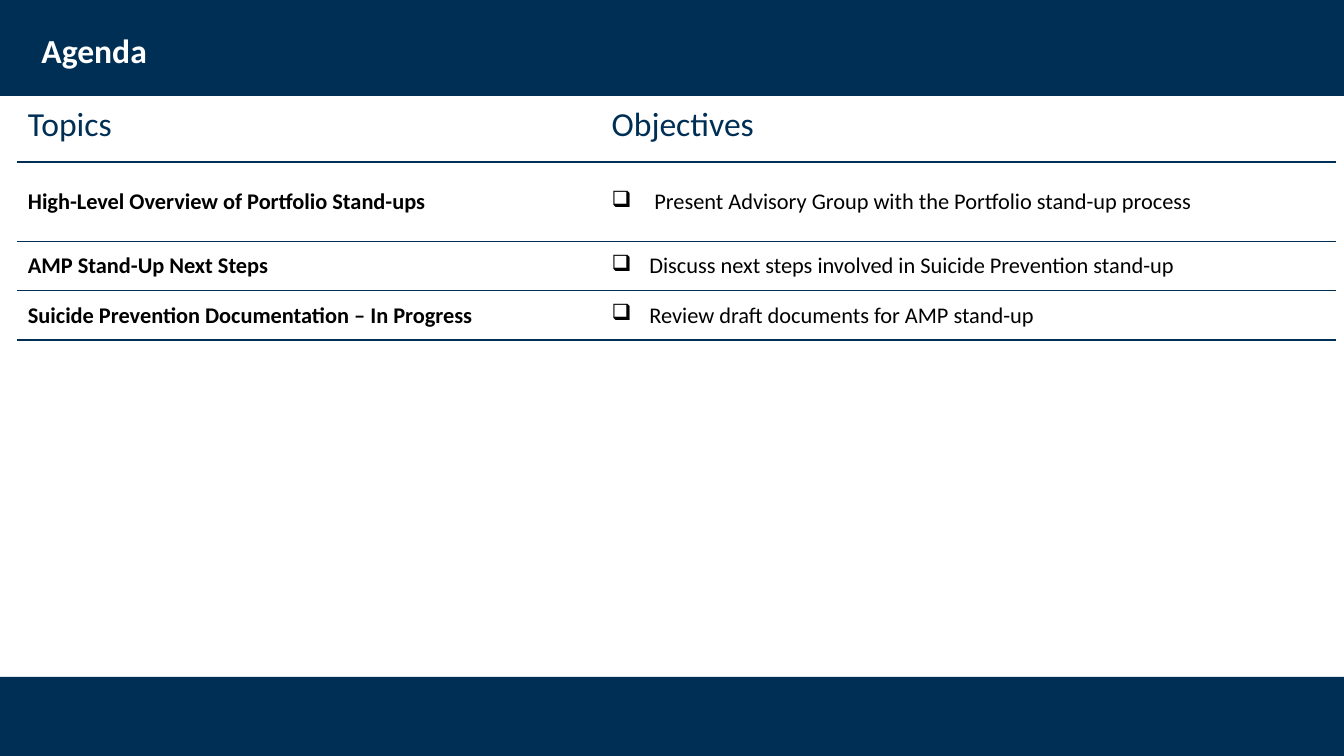
"""Build the agenda slide: navy bands, a title and a table of topics and objectives."""
import dataclasses

import pptx
import pptx.dml.color
import pptx.enum.shapes
import pptx.enum.text
import pptx.oxml
import pptx.oxml.ns
import pptx.util
from pptx.util import Cm


@dataclasses.dataclass(frozen=True)
class Theme:
    font: str = "Calibri"
    navy: str = "002F56"
    white: str = "FFFFFF"
    black: str = "000000"
    heading: int = 24
    body: int = 16
    thick: float = 1.5
    thin: float = 0.75


THEME = Theme()
HEADINGS = ("Topics", "Objectives")
AGENDA = (
    ("High-Level Overview of Portfolio Stand-ups",
     " Present Advisory Group with the Portfolio stand-up process"),
    ("AMP Stand-Up Next Steps",
     "Discuss next steps involved in Suicide Prevention stand-up"),
    ("Suicide Prevention Documentation – In Progress",
     "Review draft documents for AMP stand-up"),
)
COLUMN_WIDTHS = (14.71, 18.49)
ROW_HEIGHTS = (1.57, 2.01, 1.24, 1.24)


def rgb(color):
    return pptx.dml.color.RGBColor.from_string(color)


def add_run(p, text, size, color, bold=False):
    r = p.add_run()
    r.text = text
    r.font.name = THEME.font
    r.font.size = pptx.util.Pt(size)
    r.font.bold = bold
    r.font.color.rgb = rgb(color)


def add_band(s, top, width, height):
    sp = s.shapes.add_shape(pptx.enum.shapes.MSO_SHAPE.RECTANGLE, 0, top, width, height)
    sp.shadow.inherit = False
    sp.fill.solid()
    sp.fill.fore_color.rgb = rgb(THEME.navy)
    sp.line.fill.background()


def set_title(s, text):
    sp = s.shapes.title
    sp.left, sp.top, sp.width, sp.height = Cm(0.79), Cm(0.46), Cm(29.21), Cm(1.73)
    s.shapes._spTree.append(sp._element)
    tf = sp.text_frame
    tf.word_wrap = True
    tf.vertical_anchor = pptx.enum.text.MSO_ANCHOR.MIDDLE
    p = tf.paragraphs[0]
    p.alignment = pptx.enum.text.PP_ALIGN.LEFT
    p.line_spacing = 0.9
    add_run(p, text, THEME.heading, THEME.white, bold=True)


def set_bullet(p):
    pPr = p._p.get_or_add_pPr()
    pPr.set("marL", str(Cm(0.95)))
    pPr.set("indent", str(-Cm(0.95)))
    bullet = pptx.oxml.parse_xml(
        f'<a:buChar {pptx.oxml.ns.nsdecls("a")} char="❑"/>')
    pPr.append(bullet)


def set_borders(cell, top, bottom):
    side = (THEME.white, 1)
    tcPr = cell._tc.get_or_add_tcPr()
    edges = {"lnL": side, "lnR": side, "lnT": top, "lnB": bottom}
    for i, (tag, (color, width)) in enumerate(edges.items()):
        tcPr.insert(i, pptx.oxml.parse_xml(
            f'<a:{tag} {pptx.oxml.ns.nsdecls("a")} w="{pptx.util.Pt(width)}">'
            f'<a:solidFill><a:srgbClr val="{color}"/></a:solidFill></a:{tag}>'))


def fill_cell(cell, text, row, col):
    cell.fill.solid()
    cell.fill.fore_color.rgb = rgb(THEME.white)
    p = cell.text_frame.paragraphs[0]
    if row == 0:
        add_run(p, text, THEME.heading, THEME.navy)
        return
    cell.vertical_anchor = pptx.enum.text.MSO_ANCHOR.MIDDLE
    if col == 1:
        set_bullet(p)
    add_run(p, text, THEME.body, THEME.black, bold=col == 0)


def add_agenda(s):
    rows = (HEADINGS,) + AGENDA
    table = s.shapes.add_table(
        len(rows), len(HEADINGS), Cm(0.45), Cm(2.51),
        Cm(sum(COLUMN_WIDTHS)), Cm(sum(ROW_HEIGHTS))).table
    table.horz_banding = False
    for column, width in zip(table.columns, COLUMN_WIDTHS):
        column.width = Cm(width)
    thick, thin = (THEME.navy, THEME.thick), (THEME.navy, THEME.thin)
    rules = [(THEME.white, 1), thick] + [thin] * (len(AGENDA) - 1) + [thick]
    for i, texts in enumerate(rows):
        table.rows[i].height = Cm(ROW_HEIGHTS[i])
        for j, text in enumerate(texts):
            cell = table.cell(i, j)
            fill_cell(cell, text, i, j)
            set_borders(cell, rules[i], rules[i + 1])


def main():
    prs = pptx.Presentation()
    prs.slide_width, prs.slide_height = Cm(33.87), Cm(19.05)
    s = prs.slides.add_slide(prs.slide_layouts[5])
    add_band(s, 0, prs.slide_width, Cm(2.42))
    add_band(s, Cm(17.06), prs.slide_width, prs.slide_height - Cm(17.06))
    set_title(s, "Agenda")
    add_agenda(s)
    prs.save("out.pptx")


if __name__ == "__main__":
    main()
